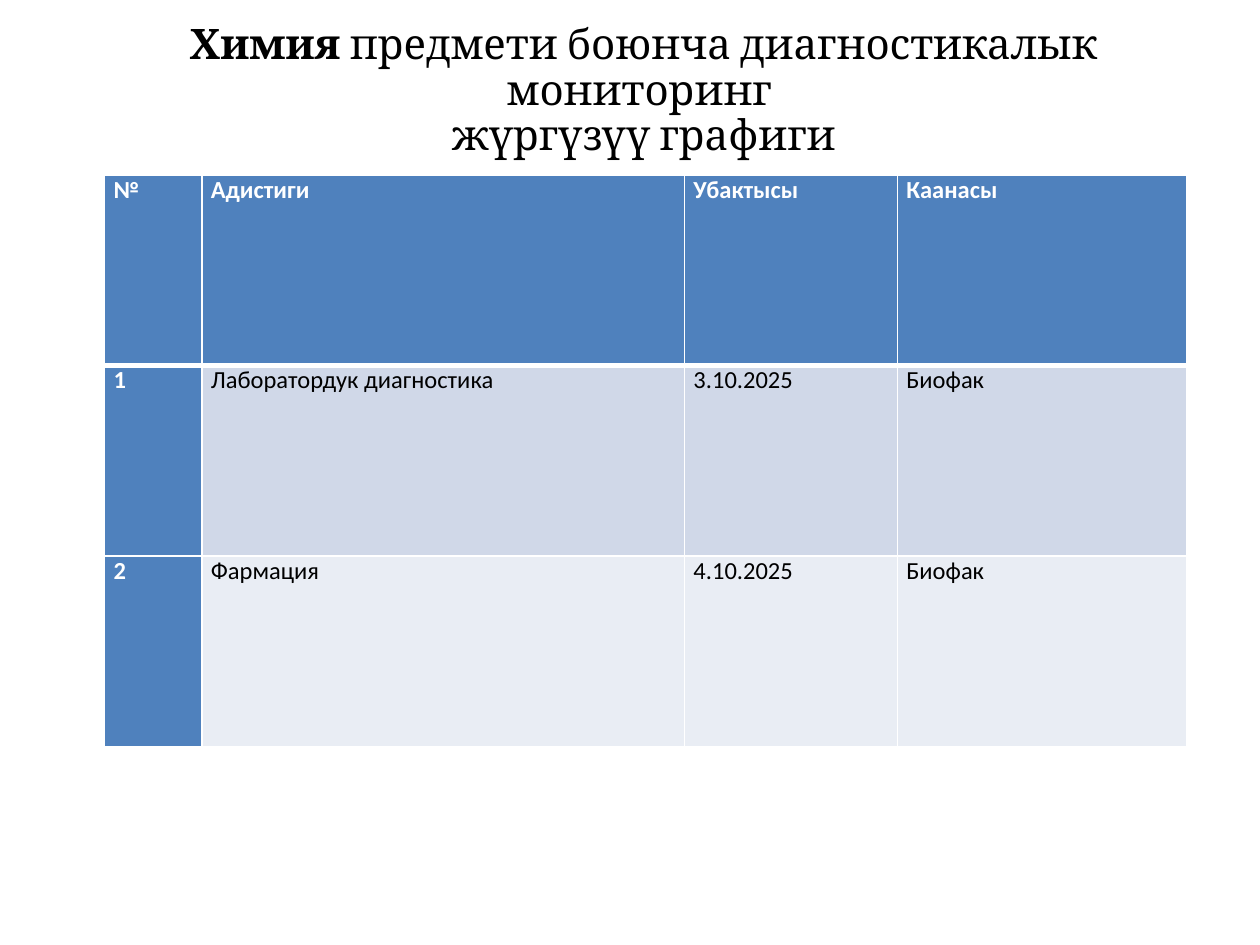
from lxml.etree import SubElement
from pptx import Presentation
from pptx.dml.color import RGBColor as RGB
from pptx.enum.text import MSO_ANCHOR as Anchor, PP_ALIGN as Align
from pptx.oxml.ns import qn
from pptx.util import Cm, Pt

BLACK = RGB(0x00, 0x00, 0x00)
WHITE = RGB(0xFF, 0xFF, 0xFF)
BLUE = RGB(0x4F, 0x81, 0xBD)
BANDS = RGB(0xD0, 0xD8, 0xE8), RGB(0xE9, 0xED, 0xF4)

COLS = 1.96, 9.73, 4.29, 5.84
ROW = 3.84
ROWS = [
    ("№", "Адистиги", "Убактысы", "Каанасы"),
    ("1", "Лаборатордук диагностика", "3.10.2025", "Биофак"),
    ("2", "Фармация", "4.10.2025", "Биофак"),
]


def write(para, text, size=14, font="Calibri", color=BLACK, bold=False):
    run = para.add_run()
    run.text = text
    run.font.size = Pt(size)
    run.font.name = font
    run.font.color.rgb = color
    run.font.bold = bold


def edge(cell, side, width):
    """Draw one white border; side is L, R, T or B."""
    line = SubElement(cell._tc.get_or_add_tcPr(), qn(f"a:ln{side}"), w=str(Pt(width)))
    fill = SubElement(line, qn("a:solidFill"))
    SubElement(fill, qn("a:srgbClr"), val=str(WHITE))


def add_title(slide, left, top, width, height):
    box = slide.shapes.add_textbox(Cm(left), Cm(top), Cm(width), Cm(height))
    frame = box.text_frame
    frame.word_wrap = True
    frame.vertical_anchor = Anchor.MIDDLE
    frame.margin_bottom = Cm(1.15)
    para = frame.paragraphs[0]
    para.alignment = Align.CENTER
    para.line_spacing = 0.9
    style = {"size": 24, "font": "Cambria"}
    write(para, "Химия", bold=True, **style)
    write(para, " предмети боюнча диагностикалык мониторинг ", **style)
    para.add_line_break()
    write(para, "жүргүзүү графиги", **style)


def add_plan(slide, left, top):
    """Place the timetable, with a blue first row and first column."""
    grid = slide.shapes.add_table(
        len(ROWS), len(COLS), Cm(left), Cm(top), Cm(sum(COLS)), Cm(ROW * len(ROWS))
    ).table
    for col, width in zip(grid.columns, COLS):
        col.width = Cm(width)
    for r, texts in enumerate(ROWS):
        grid.rows[r].height = Cm(ROW)
        for c, text in enumerate(texts):
            cell = grid.cell(r, c)
            head = r == 0 or c == 0
            cell.margin_left = cell.margin_right = Cm(0.18)
            cell.margin_top = cell.margin_bottom = 0
            write(cell.text_frame.paragraphs[0], text,
                  color=WHITE if head else BLACK, bold=head)
            for side in "LRTB":
                thick = (r, side) in ((0, "B"), (1, "T"))
                edge(cell, side, 3 if thick else 1)
            cell.fill.solid()
            cell.fill.fore_color.rgb = BLUE if head else BANDS[(r - 1) % 2]


def main():
    deck = Presentation()
    deck.slide_width, deck.slide_height = Cm(25.4), Cm(19.05)
    slide = deck.slides.add_slide(deck.slide_layouts[6])
    add_plan(slide, 2.11, 3.53)
    add_title(slide, 1.27, 0.69, 23.42, 3.33)
    deck.save("out.pptx")


if __name__ == "__main__":
    main()
